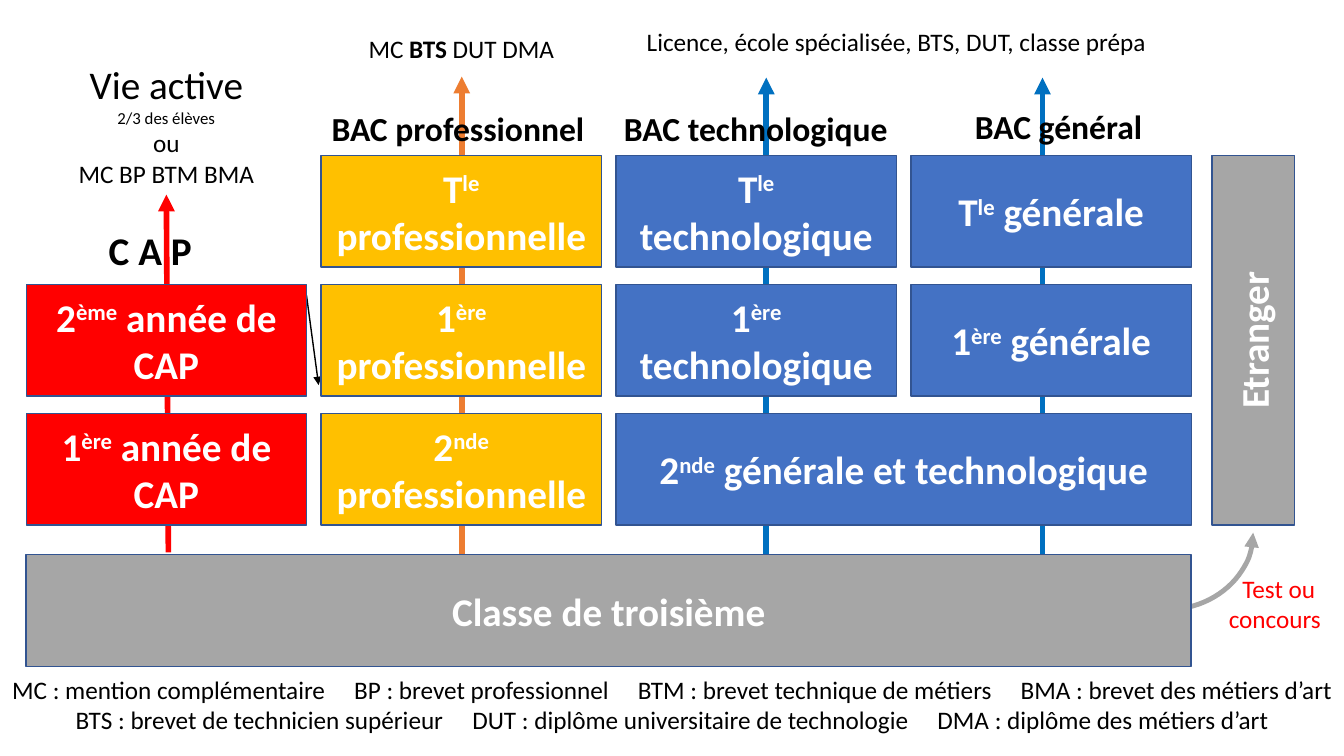
from lxml import etree
from pptx import Presentation
from pptx.dml.color import RGBColor
from pptx.enum.shapes import MSO_CONNECTOR, MSO_SHAPE
from pptx.enum.text import MSO_ANCHOR, PP_ALIGN
from pptx.oxml.ns import qn
from pptx.util import Inches, Pt

RECTANGLE, ARC, STRAIGHT = MSO_SHAPE.RECTANGLE, MSO_SHAPE.ARC, MSO_CONNECTOR.STRAIGHT
LEFT, CENTER, RIGHT = PP_ALIGN.LEFT, PP_ALIGN.CENTER, PP_ALIGN.RIGHT
MIDDLE = MSO_ANCHOR.MIDDLE

FONT = "Calibri"
BLACK, WHITE, RED, GOLD = "000000", "FFFFFF", "FF0000", "FFC000"
BLUE, GREY, BORDER = "4472C4", "A6A6A6", "325491"
SKY, ORANGE = "0070C0", "ED7D31"

GRID_LEFT, GRID_TOP = 0.26, 1.54
COLUMN_STEP, ROW_STEP = 2.925, 1.28
CELL_WIDTH, CELL_HEIGHT = 2.78, 1.11
TROISIEME_TOP = 5.5
ABROAD_LEFT, ABROAD_WIDTH = 12.02, 0.82

CLASSES = [
    (0, 1, 1, RED, "2^ème^ année de CAP"),
    (0, 2, 1, RED, "1^ère^ année de CAP"),
    (1, 0, 1, GOLD, "T^le^ professionnelle"),
    (1, 1, 1, GOLD, "1^ère^ professionnelle"),
    (1, 2, 1, GOLD, "2^nde^ professionnelle"),
    (2, 0, 1, BLUE, "T^le^ technologique"),
    (2, 1, 1, BLUE, "1^ère^ technologique"),
    (2, 2, 2, BLUE, "2^nde^ générale et technologique"),
    (3, 0, 1, BLUE, "T^le^ générale"),
    (3, 1, 1, BLUE, "1^ère^ générale"),
]
PATHWAYS = [
    ((7.6, 5.61), (7.6, 0.77), SKY, 4),
    ((10.34, 5.61), (10.34, 0.77), SKY, 4),
    ((4.58, 5.6), (4.58, 0.76), ORANGE, 4),
    ((1.67, 5.48), (1.65, 1.93), RED, 4),
    ((3.04, 2.93), (3.16, 3.82), BLACK, 1),
]
DIPLOMAS = [
    ((0.98, 2.2, 1.04, 0.57), "C A P", 28),
    ((3.19, 1.02, 2.74, 0.5), "BAC professionnel", 24),
    ((6.09, 1.02, 2.84, 0.5), "BAC technologique", 24),
    ((9.57, 1.0, 1.88, 0.5), "BAC général", 24),
]
OUTCOMES = [
    ((0.67, 0.55, 1.96, 1.38), [("Vie active", 28), ("2/3 des élèves", 12),
                                ("ou", 18), ("MC BP BTM BMA", 18)]),
    ((3.55, 0.28, 2.05, 0.4), [("MC *BTS* DUT DMA", 18)]),
    ((6.09, 0.21, 5.6, 0.4),
     [("Licence, école spécialisée, BTS, DUT, classe prépa", 18)]),
]
GLOSSARY = [
    ["MC : mention complémentaire", "BP : brevet professionnel",
     "BTM : brevet technique de métiers", "BMA : brevet des métiers d’art"],
    ["BTS : brevet de technicien supérieur",
     "DUT : diplôme universitaire de technologie",
     "DMA : diplôme des métiers d’art"],
]


def rgb(value):
    """Turn a hex string into a colour."""
    return RGBColor.from_string(value)


def style(paragraph, size, color=BLACK, bold=False, align=CENTER):
    """Set the font and alignment of a paragraph."""
    paragraph.alignment = align
    font = paragraph.font
    font.name, font.size, font.bold = FONT, Pt(size), bold
    font.color.rgb = rgb(color)


def write(paragraph, text):
    """Add runs, with ^superscript^ and *bold* marks."""
    mark = "^" if "^" in text else "*"
    for index, part in enumerate(text.split(mark)):
        run = paragraph.add_run()
        run.text = part
        if index % 2 and mark == "^":
            run.font._element.set("baseline", "30000")
        elif index % 2:
            run.font.bold = True


def add_arrowhead(line):
    """End a line with a triangle."""
    etree.SubElement(line._get_or_add_ln(), qn("a:tailEnd"), type="triangle")


def add_pathway(slide, start, end, color, width):
    """Draw a straight arrow from one point to another."""
    pathway = slide.shapes.add_connector(
        STRAIGHT, *(Inches(length) for length in start + end))
    pathway.line.color.rgb = rgb(color)
    pathway.line.width = Pt(width)
    add_arrowhead(pathway.line)
    etree.SubElement(pathway._element.spPr, qn("a:effectLst"))


def add_abroad_arc(slide, box):
    """Draw the curved arrow that leads abroad."""
    arc = slide.shapes.add_shape(ARC, *map(Inches, box))
    arc.shadow.inherit = False
    arc.fill.background()
    arc.line.color.rgb = rgb(GREY)
    arc.line.width = Pt(3.5)
    add_arrowhead(arc.line)
    arc._element.spPr.xfrm.set("flipV", "1")


def add_class(slide, box, color, text):
    """Draw a bordered class block with its name."""
    block = slide.shapes.add_shape(RECTANGLE, *map(Inches, box))
    block.shadow.inherit = False
    block.fill.solid()
    block.fill.fore_color.rgb = rgb(color)
    block.line.color.rgb = rgb(BORDER)
    block.line.width = Pt(1)
    block.text_frame.word_wrap = True
    block.text_frame.vertical_anchor = MIDDLE
    name = block.text_frame.paragraphs[0]
    style(name, 28, WHITE, True)
    write(name, text)
    return block


def add_label(slide, box, lines, color=BLACK, bold=False, align=CENTER):
    """Write lines of given sizes in an unwrapped text box."""
    frame = slide.shapes.add_textbox(*map(Inches, box)).text_frame
    frame.word_wrap = False
    for index, (text, size) in enumerate(lines):
        paragraph = frame.add_paragraph() if index else frame.paragraphs[0]
        style(paragraph, size, color, bold, align)
        write(paragraph, text)


def add_class_grid(slide):
    """Place the class blocks by column and row, above the common base."""
    for column, row, span, color, text in CLASSES:
        box = (GRID_LEFT + column * COLUMN_STEP, GRID_TOP + row * ROW_STEP,
               CELL_WIDTH + (span - 1) * COLUMN_STEP, CELL_HEIGHT)
        add_class(slide, box, color, text)
    base_width = CELL_WIDTH + 3 * COLUMN_STEP
    add_class(slide, (GRID_LEFT, TROISIEME_TOP, base_width, CELL_HEIGHT),
              GREY, "Classe de troisième")


def add_abroad(slide):
    """Place the upright block for studies abroad and its entry test."""
    height = CELL_HEIGHT + 2 * ROW_STEP
    shift = (height - ABROAD_WIDTH) / 2
    abroad = add_class(slide, (ABROAD_LEFT - shift, GRID_TOP + shift,
                               height, ABROAD_WIDTH), GREY, "Etranger")
    abroad.rotation = 270
    add_label(slide, (12.07, 5.64, 1.13, 0.71),
              [("Test ou ", 18), ("concours", 18)], RED, align=RIGHT)


def add_glossary(slide, box):
    """Write the abbreviations, parted by widened single spaces."""
    frame = slide.shapes.add_textbox(*map(Inches, box)).text_frame
    frame.word_wrap = True
    for row, entries in enumerate(GLOSSARY):
        paragraph = frame.add_paragraph() if row else frame.paragraphs[0]
        style(paragraph, 18)
        for index, entry in enumerate(entries):
            if index:
                gap = paragraph.add_run()
                gap.text = " "
                gap.font._element.set("spc", "1650")
            paragraph.add_run().text = entry


def main():
    """Build the diagram of study paths after troisième."""
    presentation = Presentation()
    presentation.slide_width = Inches(13.33)
    presentation.slide_height = Inches(7.5)
    slide = presentation.slides.add_slide(presentation.slide_layouts[6])
    add_abroad_arc(slide, (10.7, 4.52, 1.73, 1.53))
    for pathway in PATHWAYS:
        add_pathway(slide, *pathway)
    add_class_grid(slide)
    for box, text, size in DIPLOMAS:
        add_label(slide, box, [(text, size)], bold=True, align=LEFT)
    for box, lines in OUTCOMES:
        add_label(slide, box, lines)
    add_abroad(slide)
    add_glossary(slide, (-0.09, 6.64, 13.51, 0.71))
    presentation.save("out.pptx")


if __name__ == "__main__":
    main()
